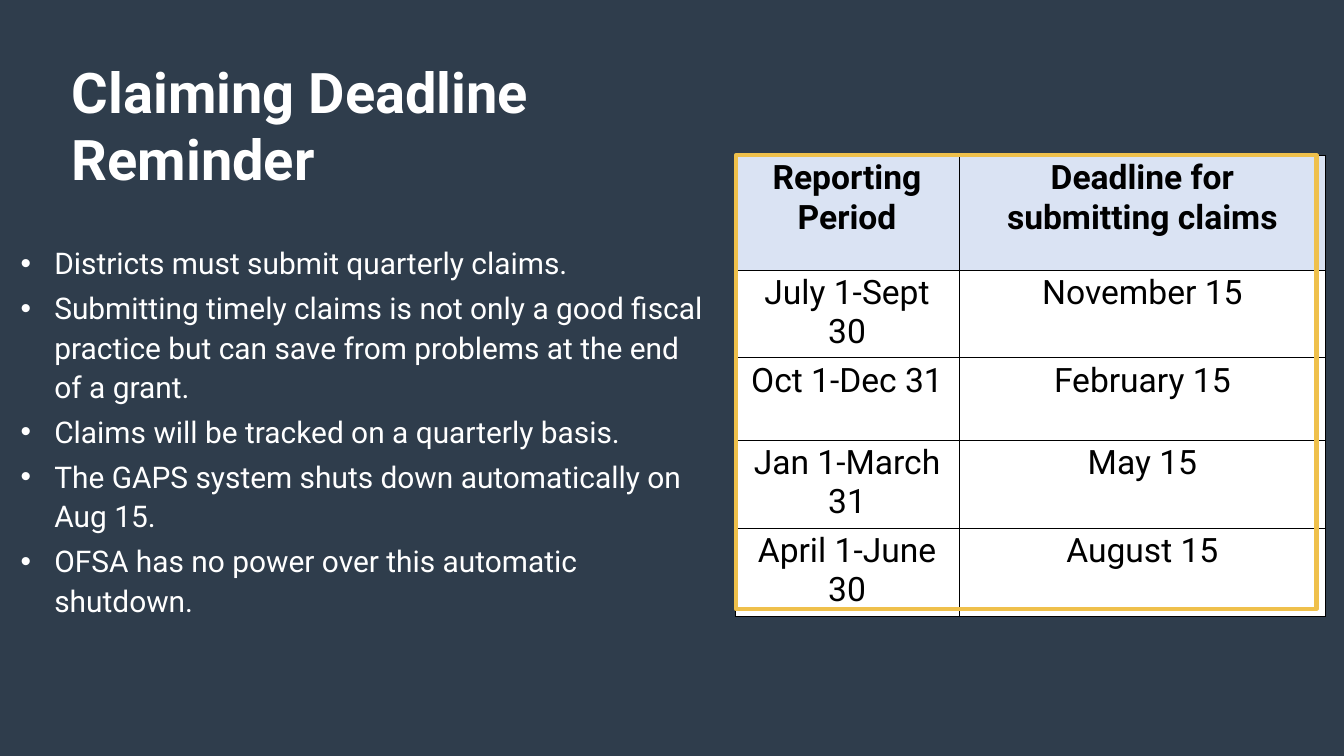
import pptx
import pptx.util
import pptx.dml.color
import pptx.enum.shapes
import pptx.enum.text
import pptx.oxml.ns
from lxml import etree

Inches = pptx.util.Inches
Pt = pptx.util.Pt
qn = pptx.oxml.ns.qn

FONT = "Roboto"
COLORS = {
    "back": "2F3D4C",
    "white": "FFFFFF",
    "black": "000000",
    "head": "DAE3F3",
    "gold": "EFC04B",
}
TITLE = "Claiming Deadline Reminder"
POINTS = [
    "Districts must submit quarterly claims.",
    "Submitting timely claims is not only a good fiscal practice but can save "
    "from problems at the end of a grant.",
    "Claims will be tracked on a quarterly basis.",
    "The GAPS system shuts down automatically on Aug 15.",
    "OFSA has no power over this automatic shutdown.",
]
ROWS = [
    ("Reporting Period", "Deadline for submitting claims"),
    ("July 1-Sept 30", "November 15"),
    ("Oct 1-Dec 31", "February 15"),
    ("Jan 1-March 31", "May 15"),
    ("April 1-June 30", "August 15"),
]
WIDTHS = [3.33, 5.46]
HEIGHTS = [1.71, 1.23, 1.23, 1.31, 1.31]


def color(name):
    return pptx.dml.color.RGBColor.from_string(COLORS[name])


def style(para, size, name, bold=False):
    font = para.font
    font.name = FONT
    font.size = Pt(size)
    font.bold = bold
    font.color.rgb = color(name)


def add_box(slide, left, top, width, height):
    box = slide.shapes.add_textbox(
        Inches(left), Inches(top), Inches(width), Inches(height))
    box.text_frame.word_wrap = True
    return box.text_frame


def add_title(slide):
    frame = add_box(slide, 0.97, 0.75, 7.95, 1.83)
    frame.margin_top = Inches(0.1)
    frame.text = TITLE
    style(frame.paragraphs[0], 60, "white", True)


def add_bullet(para):
    props = para._p.get_or_add_pPr()
    props.set("marL", str(Inches(0.5)))
    props.set("indent", str(Inches(-0.5)))
    etree.SubElement(props, qn("a:buFont"), typeface="Arial")
    etree.SubElement(props, qn("a:buChar"), char="•")


def add_list(slide):
    frame = add_box(slide, 0.21, 3.54, 10.39, 6)
    frame.text = "\n".join(POINTS)
    for para in frame.paragraphs:
        add_bullet(para)
        para.line_spacing = 1.1
        para.space_after = Pt(6)
        style(para, 32, "white")


def add_edges(cell):
    props = cell._tc.get_or_add_tcPr()
    for side in ("lnL", "lnR", "lnT", "lnB"):
        line = etree.SubElement(props, qn("a:" + side), w=str(Pt(1)))
        fill = etree.SubElement(line, qn("a:solidFill"))
        etree.SubElement(fill, qn("a:srgbClr"), val=COLORS["black"])


def fill_cell(cell, text, head):
    add_edges(cell)
    cell.fill.solid()
    cell.fill.fore_color.rgb = color("head" if head else "white")
    cell.text = text
    para = cell.text_frame.paragraphs[0]
    para.alignment = pptx.enum.text.PP_ALIGN.CENTER
    style(para, 36, "black", head)


def add_dates(slide):
    table = slide.shapes.add_table(
        len(ROWS), len(WIDTHS), Inches(10.94), Inches(2.31),
        Inches(sum(WIDTHS)), Inches(sum(HEIGHTS))).table
    table.horz_banding = False
    for col, width in zip(table.columns, WIDTHS):
        col.width = Inches(width)
    for row, height in zip(table.rows, HEIGHTS):
        row.height = Inches(height)
    for i, texts in enumerate(ROWS):
        for j, text in enumerate(texts):
            fill_cell(table.cell(i, j), text, i == 0)


def add_frame(slide):
    frame = slide.shapes.add_shape(
        pptx.enum.shapes.MSO_SHAPE.RECTANGLE,
        Inches(10.95), Inches(2.31), Inches(8.64), Inches(6.75))
    frame.shadow.inherit = False
    frame.fill.background()
    frame.line.color.rgb = color("gold")
    frame.line.width = Pt(4.5)


def main():
    deck = pptx.Presentation()
    deck.slide_width = Inches(20)
    deck.slide_height = Inches(11.25)
    slide = deck.slides.add_slide(deck.slide_layouts[6])
    slide.background.fill.solid()
    slide.background.fill.fore_color.rgb = color("back")
    add_title(slide)
    add_list(slide)
    add_dates(slide)
    add_frame(slide)
    deck.save("out.pptx")


if __name__ == "__main__":
    main()
